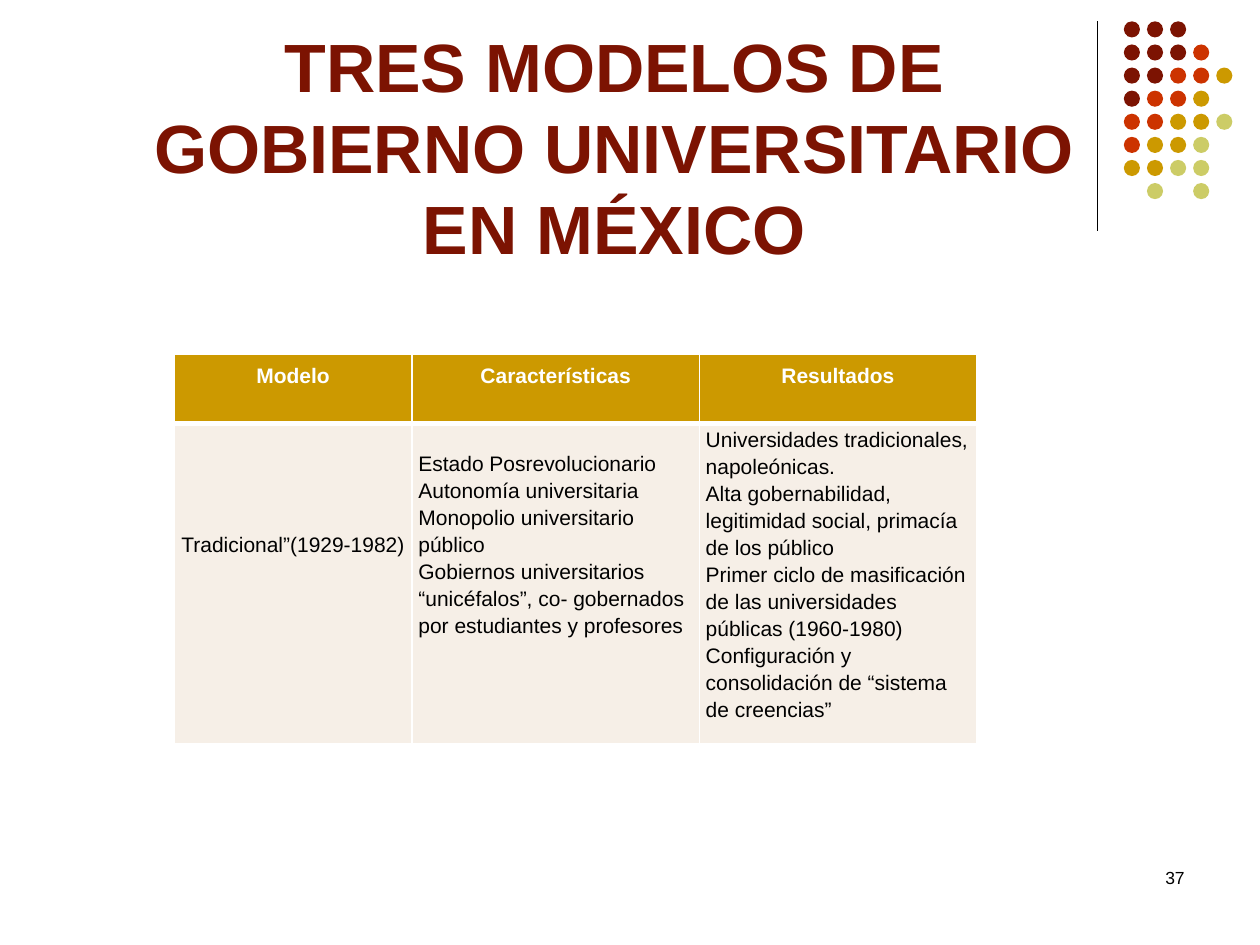
import pptx
import pptx.dml.color
import pptx.enum.shapes
import pptx.enum.text
import pptx.oxml.ns
import pptx.util
from lxml import etree

Pt = pptx.util.Pt
RGBColor = pptx.dml.color.RGBColor
Align = pptx.enum.text.PP_ALIGN
Anchor = pptx.enum.text.MSO_ANCHOR
qn = pptx.oxml.ns.qn

MAROON = RGBColor(0x7C, 0x13, 0x02)
RED = RGBColor(0xCC, 0x33, 0x00)
GOLD = RGBColor(0xCC, 0x99, 0x00)
OLIVE = RGBColor(0xCC, 0xCC, 0x66)
CREAM = RGBColor(0xF6, 0xEF, 0xE7)
WHITE = RGBColor(0xFF, 0xFF, 0xFF)
BLACK = RGBColor(0, 0, 0)

DOT_COLOURS = {"M": MAROON, "R": RED, "G": GOLD, "O": OLIVE}
DOT_ROWS = ["MMM", "MMMR", "MMRRG", "MRRG", "RRGGO", "RGGO", "GGOO", " O O"]

TITLE_FORMAT = {"size": Pt(39), "bold": True, "color": MAROON}
NUMBER_FORMAT = {"size": Pt(10), "bold": False, "color": BLACK}
HEADER_FORMAT = {"size": Pt(12), "bold": True, "color": WHITE}
BODY_FORMAT = {"size": Pt(12), "bold": False, "color": BLACK}

COLUMNS = [
    {"heading": "Modelo", "width": 136.1, "top": 60.9, "align": Align.CENTER,
     "body": ["Tradicional”(1929-1982)"]},
    {"heading": "Características", "width": 164.2, "top": 14.4, "align": Align.LEFT,
     "body": ["Estado Posrevolucionario",
              "Autonomía universitaria",
              "Monopolio universitario público",
              "Gobiernos universitarios “unicéfalos”, co- gobernados por "
              "estudiantes y profesores"]},
    {"heading": "Resultados", "width": 158.4, "top": 0.7, "align": Align.LEFT,
     "body": ["Universidades tradicionales, napoleónicas.",
              "Alta gobernabilidad, legitimidad social, primacía de los público",
              "Primer ciclo de masificación de las universidades públicas (1960-1980)",
              "Configuración y consolidación de “sistema de creencias”"]},
]


def write_text(frame, lines, align, spacing, text_format):
    """Fill a text frame with one paragraph per line."""
    for index, line in enumerate(lines):
        paragraph = frame.add_paragraph() if index else frame.paragraphs[0]
        paragraph.alignment = align
        paragraph.line_spacing = spacing
        run = paragraph.add_run()
        run.text = line
        run.font.name = "Arial"
        for key, value in text_format.items():
            if key == "color":
                run.font.color.rgb = value
            else:
                setattr(run.font, key, value)


def add_label(slide, box, text, align, anchor, spacing, text_format):
    """Place a wrapped text box."""
    frame = slide.shapes.add_textbox(*map(Pt, box)).text_frame
    frame.word_wrap = True
    frame.vertical_anchor = anchor
    write_text(frame, [text], align, spacing, text_format)


def add_corner(slide, box):
    """Draw the vertical rule and the dot pattern beside it."""
    left, top, width, height = box
    rule = slide.shapes.add_connector(
        pptx.enum.shapes.MSO_CONNECTOR.STRAIGHT,
        Pt(left), Pt(top), Pt(left), Pt(top + height))
    rule.line.color.rgb = BLACK
    rule.line.width = Pt(0.75)
    etree.SubElement(rule._element.spPr, qn("a:effectLst"))
    pitch, diameter = 13.2, 9.2
    dots_left = left + width - 4 * pitch - diameter
    dots = slide.shapes.add_group_shape()
    for row, colours in enumerate(DOT_ROWS):
        for column, key in enumerate(colours):
            if key == " ":
                continue
            dot = dots.shapes.add_shape(
                pptx.enum.shapes.MSO_SHAPE.OVAL,
                Pt(dots_left + column * pitch), Pt(top + row * pitch),
                Pt(diameter), Pt(diameter))
            dot.shadow.inherit = False
            dot.fill.solid()
            dot.fill.fore_color.rgb = DOT_COLOURS[key]
            dot.line.fill.background()


def style_cell(cell, fill, top_margin, borders):
    """Set the fill, margins and white borders of a cell."""
    margins = {"margin_left": 3.6, "margin_right": 3.6,
               "margin_top": top_margin, "margin_bottom": 0}
    for key, value in margins.items():
        setattr(cell, key, Pt(value))
    properties = cell._tc.get_or_add_tcPr()
    for side, width in borders.items():
        line = etree.SubElement(properties, qn(f"a:{side}"), w=str(Pt(width)))
        solid = etree.SubElement(line, qn("a:solidFill"))
        etree.SubElement(solid, qn("a:srgbClr"), val=str(WHITE))
    cell.fill.solid()
    cell.fill.fore_color.rgb = fill


def add_models_table(slide, box):
    """Build the table of models, features and results."""
    header_height = 39.6
    table = slide.shapes.add_table(2, len(COLUMNS), *map(Pt, box)).table
    table.rows[0].height = Pt(header_height)
    table.rows[1].height = Pt(box[3] - header_height)
    thin = {"lnL": 1, "lnR": 1, "lnT": 1, "lnB": 1}
    for index, column in enumerate(COLUMNS):
        table.columns[index].width = Pt(column["width"])
        header, body = table.cell(0, index), table.cell(1, index)
        style_cell(header, GOLD, 9.9, {**thin, "lnB": 3})
        write_text(header.text_frame, [column["heading"]], Align.CENTER,
                   Pt(9.2), HEADER_FORMAT)
        style_cell(body, CREAM, column["top"], {**thin, "lnT": 3})
        write_text(body.text_frame, column["body"], column["align"],
                   1.15, BODY_FORMAT)


def main():
    """Build and save the slide."""
    deck = pptx.Presentation()
    deck.slide_width, deck.slide_height = Pt(720), Pt(540)
    slide = deck.slides.add_slide(deck.slide_layouts[6])
    add_corner(slide, (627, 12.2, 77.2, 119.6))
    add_label(slide, (54, 54.7, 594, 102.3),
              "TRES MODELOS DE GOBIERNO UNIVERSITARIO EN MÉXICO",
              Align.CENTER, Anchor.BOTTOM, Pt(46.5), TITLE_FORMAT)
    add_models_table(slide, (99.4, 202.3, 458.7, 209.8))
    add_label(slide, (516, 492, 168, 36), "37",
              Align.RIGHT, Anchor.TOP, 1.0, NUMBER_FORMAT)
    deck.save("out.pptx")


if __name__ == "__main__":
    main()
